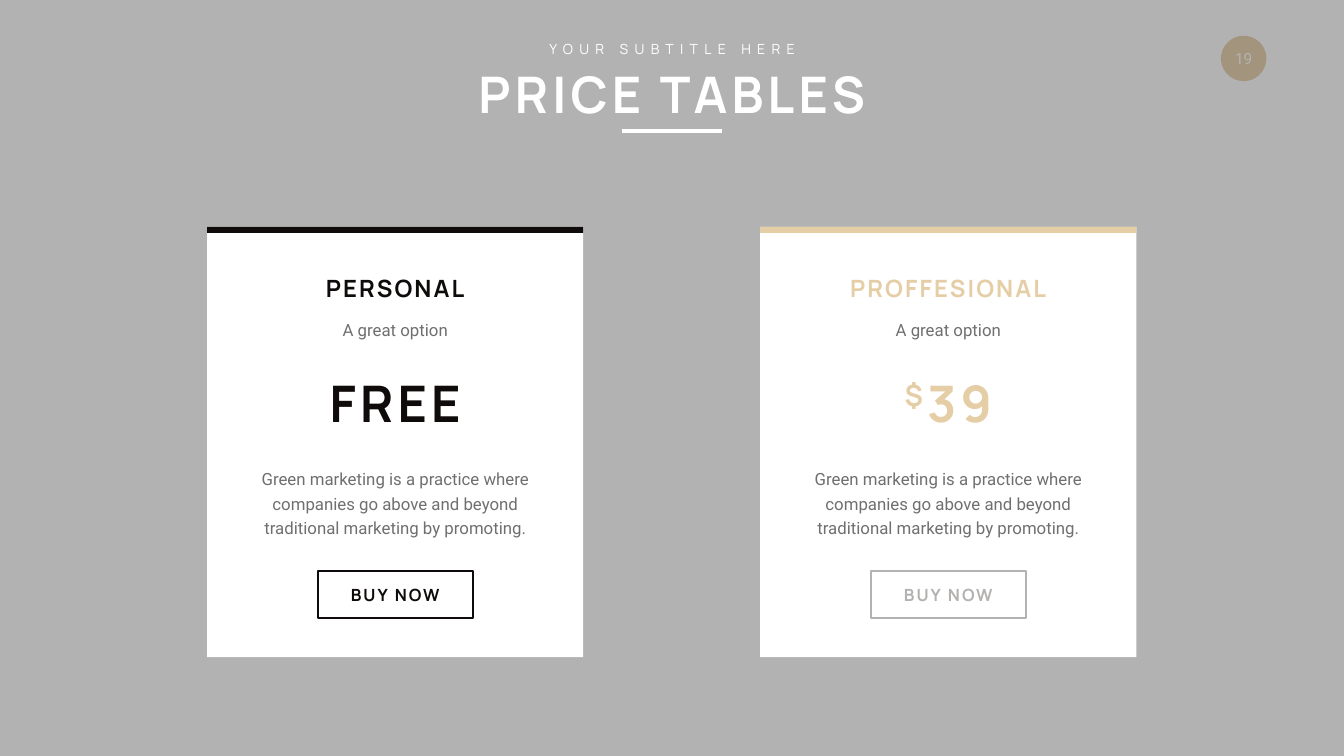
from pptx import Presentation
from pptx.dml.color import RGBColor
from pptx.enum.shapes import MSO_CONNECTOR, MSO_SHAPE
from pptx.enum.text import MSO_ANCHOR, MSO_AUTO_SIZE, PP_ALIGN
from pptx.oxml.ns import qn
from pptx.util import Inches, Pt
from lxml.etree import SubElement

WIDTH, HEIGHT = 26.66, 15
WHITE, BLACK, SAND, SILVER, GRAY = "FFFFFF", "0E0B0A", "E5CDA6", "B3B2B0", "6F6F6F"
HEADING, BODY = "Manrope", "Roboto"

TITLE, SUBTITLE, PAGE_NUMBER = "PRICE TABLES", "YOUR SUBTITLE HERE", "19"
DESCRIPTION = ("Green marketing is a practice where companies go above and beyond "
               "traditional marketing by promoting.")
PLANS = [
    {"name": "PERSONAL", "tagline": "A great option", "currency": "", "price": "FREE",
     "description": DESCRIPTION, "button": "BUY NOW", "color": BLACK, "button_color": BLACK},
    {"name": "PROFFESIONAL", "tagline": "A great option", "currency": "$", "price": "39",
     "description": DESCRIPTION, "button": "BUY NOW", "color": SAND, "button_color": SILVER},
]

CARD_LEFT, CARD_TOP, CARD_WIDTH, CARD_HEIGHT = 4.11, 4.5, 7.46, 8.54
CARD_STEP = 10.97


def rgb(color):
    return RGBColor.from_string(color)


def add_box(page, center, top, width, height, fill, line=None, kind=MSO_SHAPE.RECTANGLE):
    box = page.shapes.add_shape(kind, Inches(center - width / 2), Inches(top),
                                Inches(width), Inches(height))
    box.shadow.inherit = False
    box.fill.solid()
    box.fill.fore_color.rgb = rgb(fill)
    if line:
        box.line.color.rgb = rgb(line)
        box.line.width = Pt(3)
    else:
        box.line.fill.background()
    return box


def write(box, text, size, color, font=HEADING, bold=False, spacing=0, line_spacing=None,
          wrap=False, anchor=MSO_ANCHOR.TOP, raised=""):
    """Fill a shape with one centred paragraph; raised is a superscript prefix."""
    frame = box.text_frame
    frame.word_wrap = wrap
    frame.auto_size = MSO_AUTO_SIZE.NONE
    frame.vertical_anchor = anchor
    para = frame.paragraphs[0]
    para.alignment = PP_ALIGN.CENTER
    if line_spacing:
        para.line_spacing = Pt(line_spacing)
    para.font.name = font
    para.font.size = Pt(size)
    para.font.bold = bold
    para.font.color.rgb = rgb(color)
    for part in filter(None, (raised, text)):
        span = para.add_run()
        span.text = part
        properties = span.font._element
        if spacing:
            properties.set("spc", str(spacing * 100))
        if part == raised:
            properties.set("baseline", "30000")


def add_text(page, center, top, width, height, *content, **style):
    box = page.shapes.add_textbox(Inches(center - width / 2), Inches(top),
                                  Inches(width), Inches(height))
    write(box, *content, **style)


def add_backdrop(page):
    badge = add_box(page, 24.67, 0.71, 0.9, 0.9, SAND, kind=MSO_SHAPE.OVAL)
    write(badge, PAGE_NUMBER, 22, WHITE, BODY, anchor=MSO_ANCHOR.MIDDLE)
    veil = add_box(page, WIDTH / 2, 0, WIDTH, HEIGHT, "404040")
    color = veil.element.spPr.find(qn("a:solidFill"))[0]
    SubElement(color, qn("a:alpha")).set("val", "40000")


def add_header(page):
    center = WIDTH / 2
    title = page.shapes.title
    title.left, title.top = Inches(center - 8.15 / 2), Inches(1.2)
    title.width, title.height = Inches(8.15), Inches(1.31)
    write(title, TITLE, 72, WHITE, bold=True, spacing=6)
    title.element.getparent().append(title.element)  # in front of the backdrop
    add_text(page, center, 0.76, 5.45, 0.44, SUBTITLE, 20, WHITE, spacing=9)
    rule = page.shapes.add_connector(MSO_CONNECTOR.STRAIGHT, Inches(center - 1), Inches(2.6),
                                     Inches(center + 1), Inches(2.6))
    rule.line.color.rgb = rgb(WHITE)
    rule.line.width = Pt(5)
    SubElement(rule.element.spPr, qn("a:effectLst"))


def add_card(page, center, plan):
    color = plan["color"]
    strong = {"bold": True, "anchor": MSO_ANCHOR.MIDDLE}
    add_box(page, center, CARD_TOP, CARD_WIDTH, CARD_HEIGHT, WHITE)
    add_box(page, center, CARD_TOP, CARD_WIDTH, 0.12, color)
    add_text(page, center, 5.38, 4.27, 0.67, plan["name"], 34, color, spacing=3, **strong)
    add_text(page, center, 6.17, 3.99, 0.6, plan["tagline"], 24, GRAY, BODY,
             line_spacing=38, wrap=True)
    add_text(page, center, 7.32, 3.03, 1.31, plan["price"], 72, color, spacing=6,
             raised=plan["currency"], **strong)
    add_text(page, center, 9.17, 5.73, 1.55, plan["description"], 24, GRAY, BODY,
             line_spacing=35, wrap=True)
    button = add_box(page, center, 11.33, 3.07, 0.93, WHITE, line=plan["button_color"])
    write(button, plan["button"], 24, plan["button_color"], spacing=3, **strong)


def main():
    deck = Presentation()
    deck.slide_width, deck.slide_height = Inches(WIDTH), Inches(HEIGHT)
    page = deck.slides.add_slide(deck.slide_layouts[5])
    add_backdrop(page)
    add_header(page)
    for index, plan in enumerate(PLANS):
        add_card(page, CARD_LEFT + CARD_WIDTH / 2 + index * CARD_STEP, plan)
    deck.save("out.pptx")


if __name__ == "__main__":
    main()
